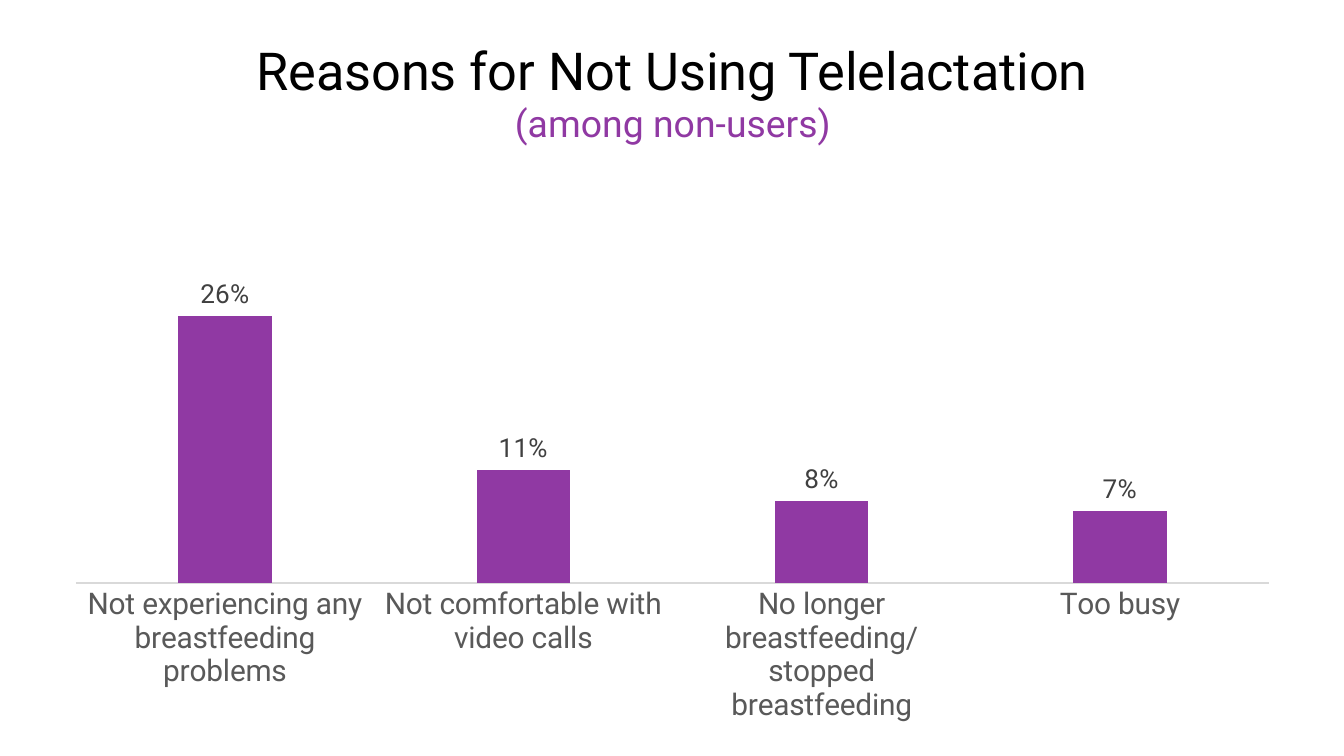
from pptx import Presentation
from pptx.chart.data import CategoryChartData
from pptx.dml.color import RGBColor
from pptx.enum.chart import XL_CHART_TYPE, XL_LABEL_POSITION, XL_TICK_MARK
from pptx.enum.text import MSO_ANCHOR, MSO_AUTO_SIZE, PP_ALIGN
from pptx.util import Emu, Pt

COLUMN = XL_CHART_TYPE.COLUMN_CLUSTERED
OUTSIDE_END = XL_LABEL_POSITION.OUTSIDE_END
NO_TICKS = XL_TICK_MARK.NONE
TOP = MSO_ANCHOR.TOP
NO_FIT = MSO_AUTO_SIZE.NONE
CENTER = PP_ALIGN.CENTER

PX = 914400 / 134.4
FONT = "Roboto"
TITLE_ONLY = 5
COLORS = {
    "title": "000000",
    "purple": "9039A3",
    "value": "404040",
    "category": "595959",
    "axis": "D9D9D9",
}
REASONS = {
    "Not experiencing any breastfeeding problems": 0.26,
    "Not comfortable with video calls": 0.11,
    "No longer breastfeeding/stopped breastfeeding": 0.08,
    "Too busy": 0.07,
}


def px(length):
    return Emu(round(length * PX))


def color(name):
    return RGBColor.from_string(COLORS[name])


def format_font(font, size, color_name):
    font.name = FONT
    font.size = Pt(size)
    font.color.rgb = color(color_name)


def write_text(shape, text, *, size, color_name, align=CENTER, line_spacing=0.9):
    frame = shape.text_frame
    frame.word_wrap = True
    frame.auto_size = NO_FIT
    frame.vertical_anchor = TOP
    paragraph = frame.paragraphs[0]
    paragraph.alignment = align
    paragraph.line_spacing = line_spacing
    paragraph.space_before = Pt(0)
    run = paragraph.add_run()
    run.text = text
    format_font(run.font, size, color_name)


class SlideBuilder:
    def __init__(self, presentation):
        self.slide = presentation.slides.add_slide(presentation.slide_layouts[TITLE_ONLY])

    def title(self, text, left, top, width, height, **style):
        shape = self.slide.shapes.title
        shape.left, shape.top = px(left), px(top)
        shape.width, shape.height = px(width), px(height)
        write_text(shape, text, **style)

    def text(self, text, left, top, width, height, **style):
        shape = self.slide.shapes.add_textbox(px(left), px(top), px(width), px(height))
        write_text(shape, text, **style)

    def column_chart(self, values, left, top, width, height, *, maximum):
        data = CategoryChartData(number_format="0%")
        data.categories = list(values)
        data.add_series("Series 1", list(values.values()))
        chart = self.slide.shapes.add_chart(
            COLUMN, px(left), px(top), px(width), px(height), data
        ).chart
        chart.has_legend = False
        chart.has_title = False
        format_font(chart.font, 10, "title")

        category_axis = chart.category_axis
        category_axis.major_tick_mark = NO_TICKS
        category_axis.minor_tick_mark = NO_TICKS
        category_axis.format.line.color.rgb = color("axis")
        category_axis.format.line.width = Pt(0.75)
        format_font(category_axis.tick_labels.font, 16, "category")

        value_axis = chart.value_axis
        value_axis.visible = False
        value_axis.has_major_gridlines = False
        value_axis.minimum_scale = 0
        value_axis.maximum_scale = maximum

        plot = chart.plots[0]
        plot.gap_width = 219
        plot.overlap = -27
        plot.vary_by_categories = False
        series = plot.series[0]
        series.format.fill.solid()
        series.format.fill.fore_color.rgb = color("purple")

        labels = series.data_labels
        labels.show_value = True
        labels.position = OUTSIDE_END
        labels.number_format = "0%"
        labels.number_format_is_linked = False
        format_font(labels.font, 14, "value")


def main():
    presentation = Presentation()
    presentation.slide_width = px(1344)
    presentation.slide_height = px(756)
    builder = SlideBuilder(presentation)
    builder.title(
        "Reasons for Not Using Telelactation", 0, 39, 1344, 71, size=28, color_name="title"
    )
    builder.text("(among non-users)", 1, 99, 1344, 54, size=20, color_name="purple")
    builder.column_chart(REASONS, 51, 266, 1243, 466, maximum=0.3)
    presentation.save("out.pptx")


if __name__ == "__main__":
    main()
